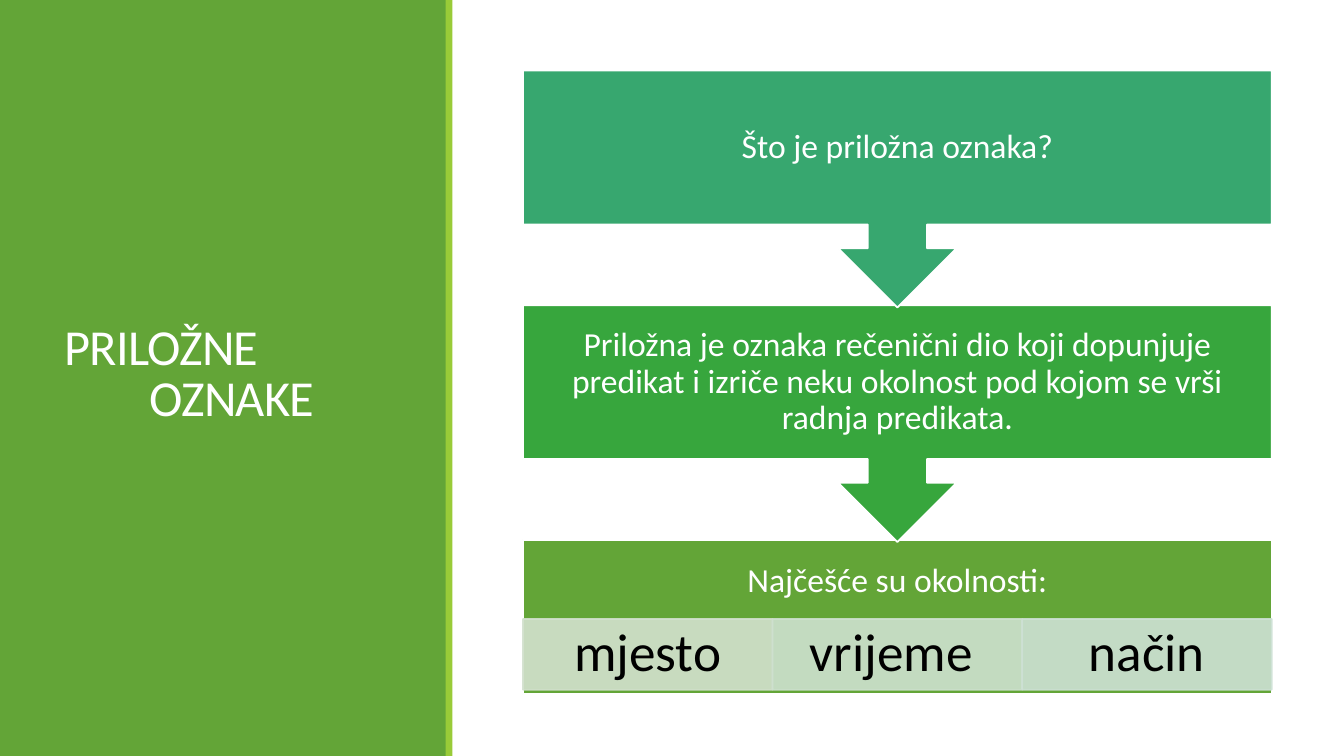
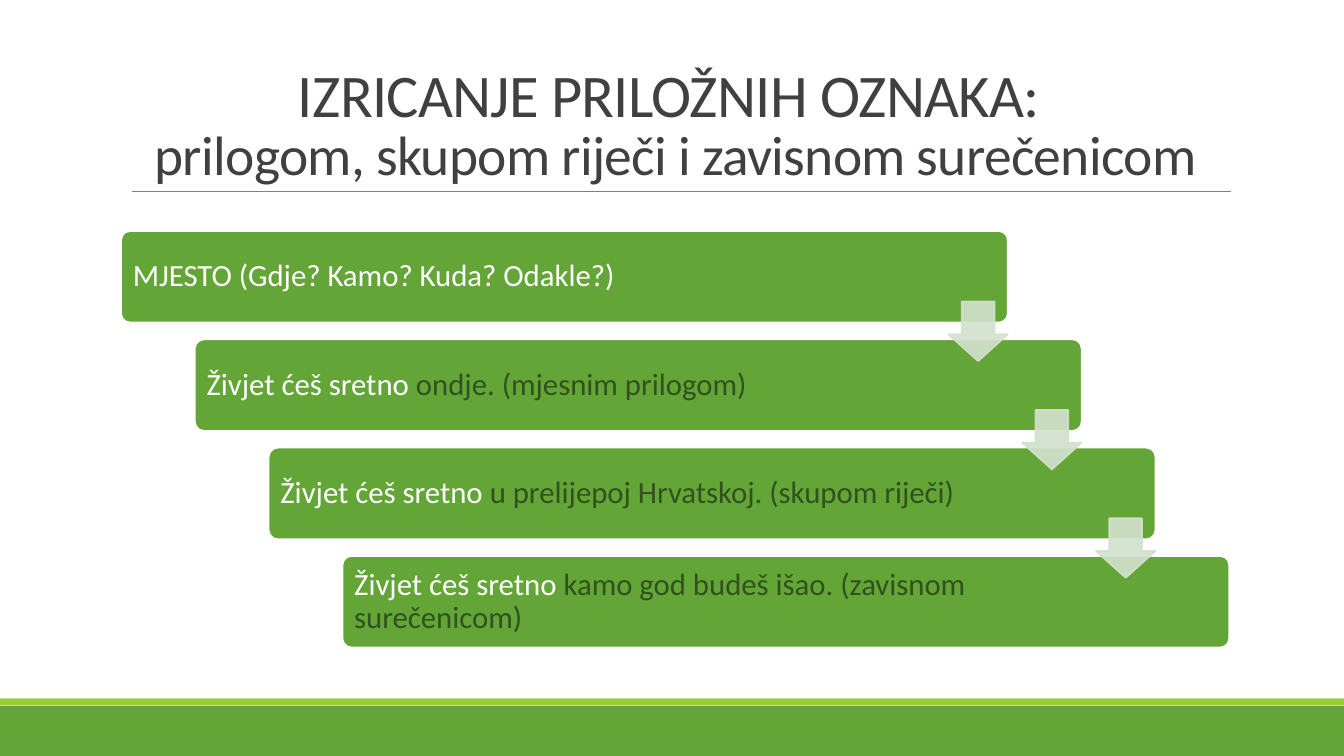
"""Build two slides on adverbial phrases in Croatian."""
import pptx
import pptx.dml.color
import pptx.enum.shapes
import pptx.enum.text
import pptx.oxml
import pptx.oxml.ns
import pptx.util

Cm = pptx.util.Cm
Pt = pptx.util.Pt
RGBColor = pptx.dml.color.RGBColor
Kind = pptx.enum.shapes.MSO_SHAPE
Align = pptx.enum.text.PP_ALIGN
Anchor = pptx.enum.text.MSO_ANCHOR
qn = pptx.oxml.ns.qn

WHITE = RGBColor(0xFF, 0xFF, 0xFF)
BLACK = RGBColor(0, 0, 0)
GREEN = RGBColor(0x63, 0xA5, 0x37)
LIME = RGBColor(0x99, 0xCB, 0x38)
LEAF = RGBColor(0x37, 0xA6, 0x3D)
TEAL = RGBColor(0x37, 0xA7, 0x6F)
PALE = RGBColor(0xD3, 0xE1, 0xCE)
MINT = RGBColor(0xCE, 0xE1, 0xCF)
MIST = RGBColor(0xCE, 0xE1, 0xD5)
DARK = RGBColor(0x40, 0x40, 0x40)
MOSS = RGBColor(0x31, 0x52, 0x1C)
GRAY = RGBColor(0x80, 0x80, 0x80)

FONT = "Calibri"
WIDE, HIGH = 33.87, 19.05

SIDE = [((0, 0, 11.25, HIGH), GREEN), ((11.23, 0, 0.17, HIGH), LIME)]
FOOT = [((0, 17.78, WIDE, 1.27), GREEN), ((0, 17.6, WIDE, 0.17), LIME)]

HEAD_ONE = [[("PRILOŽNE", 36, WHITE)], [("OZNAKE", 36, WHITE)]]
HEAD_TWO = [
    [("IZRICANJE PRILOŽNIH OZNAKA: ", 43.2, DARK)],
    [("prilogom, skupom riječi i zavisnom surečenicom", 39.6, DARK)],
]
STEPS = [
    ("Što je priložna oznaka?", TEAL),
    ("Priložna je oznaka rečenični dio koji dopunjuje predikat i izriče "
     "neku okolnost pod kojom se vrši radnja predikata.", LEAF),
    ("Najčešće su okolnosti:", GREEN),
]
CELLS = [("mjesto", PALE), ("vrijeme ", MINT), ("način", MIST)]
START = "Živjet ćeš sretno "
CARDS = [
    ("MJESTO (Gdje? Kamo? Kuda? Odakle?)", ""),
    (START, "ondje. (mjesnim prilogom)"),
    (START, "u prelijepoj Hrvatskoj. (skupom riječi)"),
    (START, "kamo god budeš išao. (zavisnom surečenicom)"),
]


def pads(left, top, right, base):
    """Return the four text margins as format values."""
    names = ("margin_left", "margin_top", "margin_right", "margin_bottom")
    return {name: Cm(size) for name, size in zip(names, (left, top, right, base))}


def apply(thing, look):
    """Set every format value on an object."""
    for name, value in look.items():
        setattr(thing, name, value)


def shade(slide, kind, area, fill, edge=None, alpha=None, bends=()):
    """Add a filled shape, with an optional outline and opacity."""
    shape = slide.shapes.add_shape(kind, *map(Cm, area))
    shape.shadow.inherit = False
    shape.fill.solid()
    shape.fill.fore_color.rgb = fill
    if edge is None:
        shape.line.fill.background()
    else:
        shape.line.color.rgb = edge
        shape.line.width = Pt(1.25)
    for spot, bend in enumerate(bends):
        shape.adjustments[spot] = bend
    if alpha:
        for tint in shape._element.spPr.iter(qn("a:srgbClr")):
            pptx.oxml.parse_xml(
                '<a:r xmlns:a="http://schemas.openxmlformats.org/drawingml/2006/main">'
                f'<a:alpha val="{alpha * 1000}"/></a:r>'
            )
            tint.append(tint.makeelement(qn("a:alpha"), {"val": str(alpha * 1000)}))
    return shape


def write(shape, paras, align, look, space=0.9, track=0):
    """Fill a shape with paragraphs of (text, size, colour) runs."""
    frame = shape.text_frame
    apply(frame, {"word_wrap": True, "vertical_anchor": Anchor.MIDDLE, **look})
    for spot, runs in enumerate(paras):
        para = frame.add_paragraph() if spot else frame.paragraphs[0]
        apply(para, {"alignment": align, "line_spacing": space})
        for text, size, tint in runs:
            run = para.add_run()
            run.text = text
            apply(run.font, {"name": FONT, "size": Pt(size)})
            run.font.color.rgb = tint
            if track:
                run._r.get_or_add_rPr().set("spc", str(track))


def head(slide, area, paras, align, anchor):
    """Add a slide title in the shared style."""
    title = slide.shapes.add_textbox(*map(Cm, area))
    look = {"vertical_anchor": anchor, **pads(0.25, 0.13, 0.25, 0.13)}
    write(title, paras, align, look, 0.85, -50)
    return title


def bands(slide, parts):
    """Draw the coloured bands of a slide."""
    for area, fill in parts:
        shade(slide, Kind.RECTANGLE, area, fill)


def flow(slide):
    """Draw the question, the answer and the row of cells."""
    bands(slide, SIDE)
    title = head(slide, (1.37, 1.45, 8.56, 16.03), HEAD_ONE, Align.LEFT, Anchor.MIDDLE)
    last = title.text_frame.paragraphs[-1]
    last._p.get_or_add_pPr().set("marL", str(Cm(2.15)))

    left, top, wide, pitch = 13.18, 1.78, 18.87, 5.91
    for spot, (text, fill) in reversed(list(enumerate(STEPS))):
        final = spot == len(STEPS) - 1
        kind = Kind.RECTANGLE if final else Kind.DOWN_ARROW_CALLOUT
        tall = 3.89 if final else 5.97
        area = (left, top + spot * pitch, wide, tall)
        step = shade(slide, kind, area, fill, WHITE)
        look = pads(0.48, 0.48, 0.48, 2.28 if final else 0.48)
        write(step, [[(text, 24, WHITE)]], Align.CENTER, look)

    part = wide / len(CELLS)
    for spot, (text, fill) in enumerate(CELLS):
        area = (left + spot * part, 15.6, part, 1.78)
        cell = shade(slide, Kind.RECTANGLE, area, fill, fill, 90)
        look = pads(0.76, 0.13, 0.76, 0.13)
        write(cell, [[(text, 38, BLACK)]], Align.CENTER, look)


def stairs(slide):
    """Draw the stepped cards joined by arrows."""
    bands(slide, FOOT)
    rule = slide.shapes.add_connector(
        pptx.enum.shapes.MSO_CONNECTOR.STRAIGHT, Cm(3.33), Cm(4.83), Cm(31.01), Cm(4.83)
    )
    rule.line.color.rgb = GRAY
    rule.line.width = Pt(0.5)
    props = rule._element.spPr
    props.append(props.makeelement(qn("a:effectLst"), {}))
    head(slide, (3.05, 0.79, 27.94, 4.04), HEAD_TWO, Align.CENTER, Anchor.BOTTOM)

    wide, tall, size = 22.35, 2.31, 1.5
    spots = [(3.05 + 1.86 * spot, 5.82 + 2.73 * spot) for spot in range(len(CARDS))]
    for (left, top), (lead, rest) in zip(spots, CARDS):
        area = (left, top, wide, tall)
        card = shade(slide, Kind.ROUNDED_RECTANGLE, area, GREEN, WHITE, bends=(0.1,))
        runs = [(text, 22, tint) for text, tint in ((lead, WHITE), (rest, MOSS)) if text]
        write(card, [runs], Align.LEFT, pads(0.23, 0.23, 3.55, 0.23))
    for left, top in spots[:-1]:
        area = (left + wide - size, top + 1.78, size, size)
        shade(slide, Kind.DOWN_ARROW, area, PALE, PALE, 90, (0.55, 0.45))


def main():
    """Make the deck and save it."""
    deck = pptx.Presentation()
    apply(deck, {"slide_width": Cm(WIDE), "slide_height": Cm(HIGH)})
    for draw in (flow, stairs):
        draw(deck.slides.add_slide(deck.slide_layouts[6]))
    deck.save("out.pptx")


if __name__ == "__main__":
    main()
